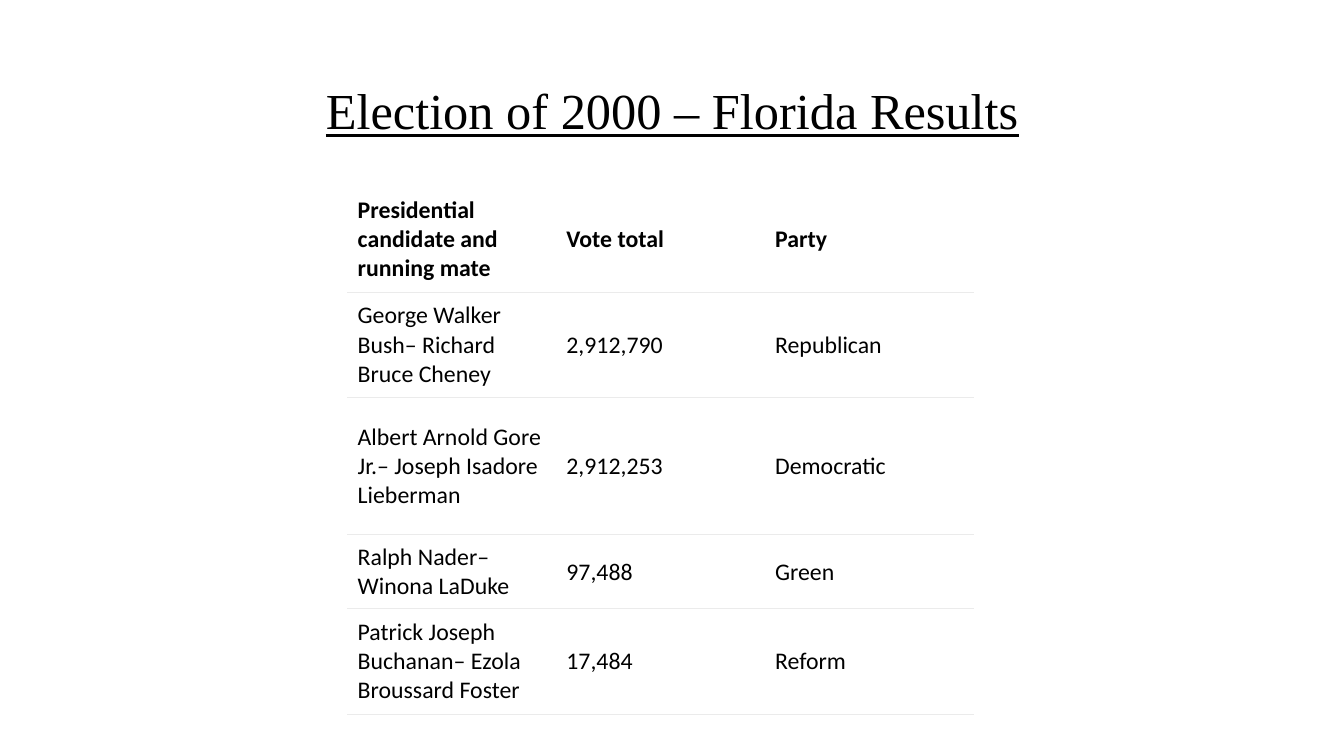
from lxml import etree
from pptx import Presentation
from pptx.dml.color import RGBColor
from pptx.enum.text import MSO_ANCHOR, PP_ALIGN
from pptx.oxml.ns import qn
from pptx.util import Cm, Pt

MIDDLE = MSO_ANCHOR.MIDDLE
LEFT, CENTER = PP_ALIGN.LEFT, PP_ALIGN.CENTER
TITLE_ONLY = 5
COLORS = {"text": "000000", "rule": "EBEBEB"}

RESULTS = [
    ("Presidential candidate and running mate", "Vote total", "Party"),
    ("George Walker Bush– Richard Bruce Cheney", "2,912,790", "Republican"),
    ("Albert Arnold Gore Jr.– Joseph Isadore Lieberman", "2,912,253", "Democratic"),
    ("Ralph Nader– Winona LaDuke", "97,488", "Green"),
    ("Patrick Joseph Buchanan– Ezola Broussard Foster", "17,484", "Reform"),
]
COLUMN_WIDTH = 5.26
ROW_HEIGHTS = [2.66, 2.66, 3.46, 1.86, 2.66]


def write_text(frame, text, size=17, font="Calibri", bold=False,
               underline=False, align=LEFT, line_spacing=1.0):
    paragraph = frame.paragraphs[0]
    paragraph.alignment = align
    paragraph.line_spacing = line_spacing
    run = paragraph.add_run()
    run.text = text
    run.font.size = Pt(size)
    run.font.name = font
    run.font.bold = bold
    run.font.underline = underline
    run.font.color.rgb = RGBColor.from_string(COLORS["text"])


def add_rule(cell, side):
    line = etree.SubElement(cell._tc.get_or_add_tcPr(), qn(f"a:{side}"), w=str(Pt(0.75)))
    fill = etree.SubElement(line, qn("a:solidFill"))
    etree.SubElement(fill, qn("a:srgbClr"), val=COLORS["rule"])


def add_title(slide, text):
    title = slide.shapes.title
    title.left, title.top, title.width, title.height = Cm(2.34), Cm(1.02), Cm(29.21), Cm(3.68)
    title.text_frame.vertical_anchor = MIDDLE
    title.text_frame.word_wrap = True
    write_text(title.text_frame, text, size=36, font="Times New Roman",
               underline=True, align=CENTER, line_spacing=0.9)


def add_results_table(slide, results):
    columns = len(results[0])
    table = slide.shapes.add_table(
        len(results), columns, Cm(8.76), Cm(4.7),
        Cm(COLUMN_WIDTH * columns), Cm(sum(ROW_HEIGHTS))).table
    table.first_row = table.horz_banding = False
    for column in table.columns:
        column.width = Cm(COLUMN_WIDTH)

    for row_index, entries in enumerate(results):
        table.rows[row_index].height = Cm(ROW_HEIGHTS[row_index])
        for column_index, entry in enumerate(entries):
            cell = table.cell(row_index, column_index)
            cell.vertical_anchor = MIDDLE
            # Neighbouring cells share a rule; the header has none above it
            if row_index > 0:
                add_rule(cell, "lnT")
            add_rule(cell, "lnB")
            cell.fill.background()
            write_text(cell.text_frame, entry, bold=row_index == 0)


def main():
    presentation = Presentation()
    presentation.slide_width, presentation.slide_height = Cm(33.87), Cm(19.05)
    slide = presentation.slides.add_slide(presentation.slide_layouts[TITLE_ONLY])

    # Heading
    add_title(slide, "Election of 2000 – Florida Results")

    # Votes by candidate
    add_results_table(slide, RESULTS)

    presentation.save("out.pptx")


if __name__ == "__main__":
    main()
